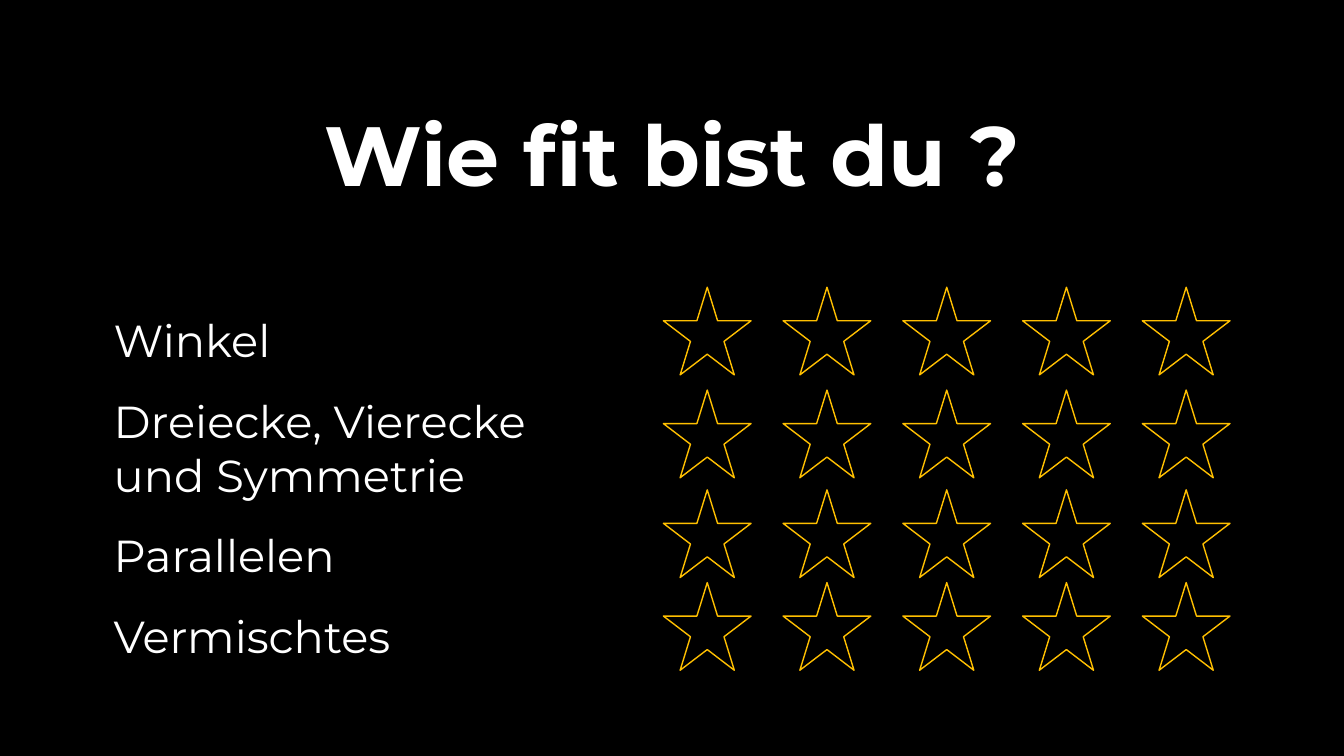
from dataclasses import dataclass

from pptx import Presentation
from pptx.dml.color import RGBColor
from pptx.enum.shapes import MSO_SHAPE
from pptx.enum.text import MSO_ANCHOR, PP_ALIGN
from pptx.slide import Slide
from pptx.util import Inches, Pt

WIDTH, HEIGHT = 13.33, 7.5
FONT = "Montserrat"
BLACK, WHITE, GOLD = "000000", "FFFFFF", "FFC000"
STARS_PER_ROW = 5
FIRST_STAR, STAR_STEP, STAR_SIZE = 6.58, 1.1875, 0.87
RATING_TOPS = (2.85, 3.87, 4.86, 5.78)


@dataclass(frozen=True)
class Line:
    text: str
    size: int = 32
    bold: bool = False
    centred: bool = False
    spacing: float = 1.5
    before: float = 0
    indent: float = 0.88


LINES = (
    Line("Wie fit bist du ?", size=60, bold=True, centred=True, spacing=0.9, indent=0),
    Line("Winkel", before=58),
    Line("Dreiecke, Vierecke"),
    Line("und Symmetrie", spacing=1),
    Line("Parallelen"),
    Line("Vermischtes"),
)


def colour(value: str) -> RGBColor:
    return RGBColor.from_string(value)


def add_questions(slide: Slide, lines: tuple[Line, ...]) -> None:
    box = slide.shapes.add_textbox(Inches(0.15), Inches(0.29), Inches(13.03), Inches(6.98))
    frame = box.text_frame
    frame.word_wrap = True
    frame.vertical_anchor = MSO_ANCHOR.MIDDLE
    frame.margin_top = Inches(0.19)
    for index, line in enumerate(lines):
        paragraph = frame.add_paragraph() if index else frame.paragraphs[0]
        paragraph.alignment = PP_ALIGN.CENTER if line.centred else PP_ALIGN.LEFT
        paragraph.line_spacing = line.spacing
        if line.before:
            paragraph.space_before = Pt(line.before)
        if line.indent:
            paragraph._p.get_or_add_pPr().set("marL", str(Inches(line.indent)))
        run = paragraph.add_run()
        run.text = line.text
        run.font.name = FONT
        run.font.size = Pt(line.size)
        run.font.bold = line.bold
        run.font.color.rgb = colour(WHITE)


def add_rating(slide: Slide, top: float) -> None:
    rating = slide.shapes.add_group_shape()
    for column in range(STARS_PER_ROW):
        star = rating.shapes.add_shape(
            MSO_SHAPE.STAR_5_POINT,
            Inches(FIRST_STAR + column * STAR_STEP),
            Inches(top),
            Inches(STAR_SIZE),
            Inches(STAR_SIZE),
        )
        star.shadow.inherit = False
        star.fill.background()
        star.line.color.rgb = colour(GOLD)
        star.line.width = Pt(1)


def main() -> None:
    deck = Presentation()
    deck.slide_width, deck.slide_height = Inches(WIDTH), Inches(HEIGHT)
    slide = deck.slides.add_slide(deck.slide_layouts[6])
    slide.background.fill.solid()
    slide.background.fill.fore_color.rgb = colour(BLACK)
    add_questions(slide, LINES)
    for top in RATING_TOPS:
        add_rating(slide, top)
    deck.save("out.pptx")


if __name__ == "__main__":
    main()
